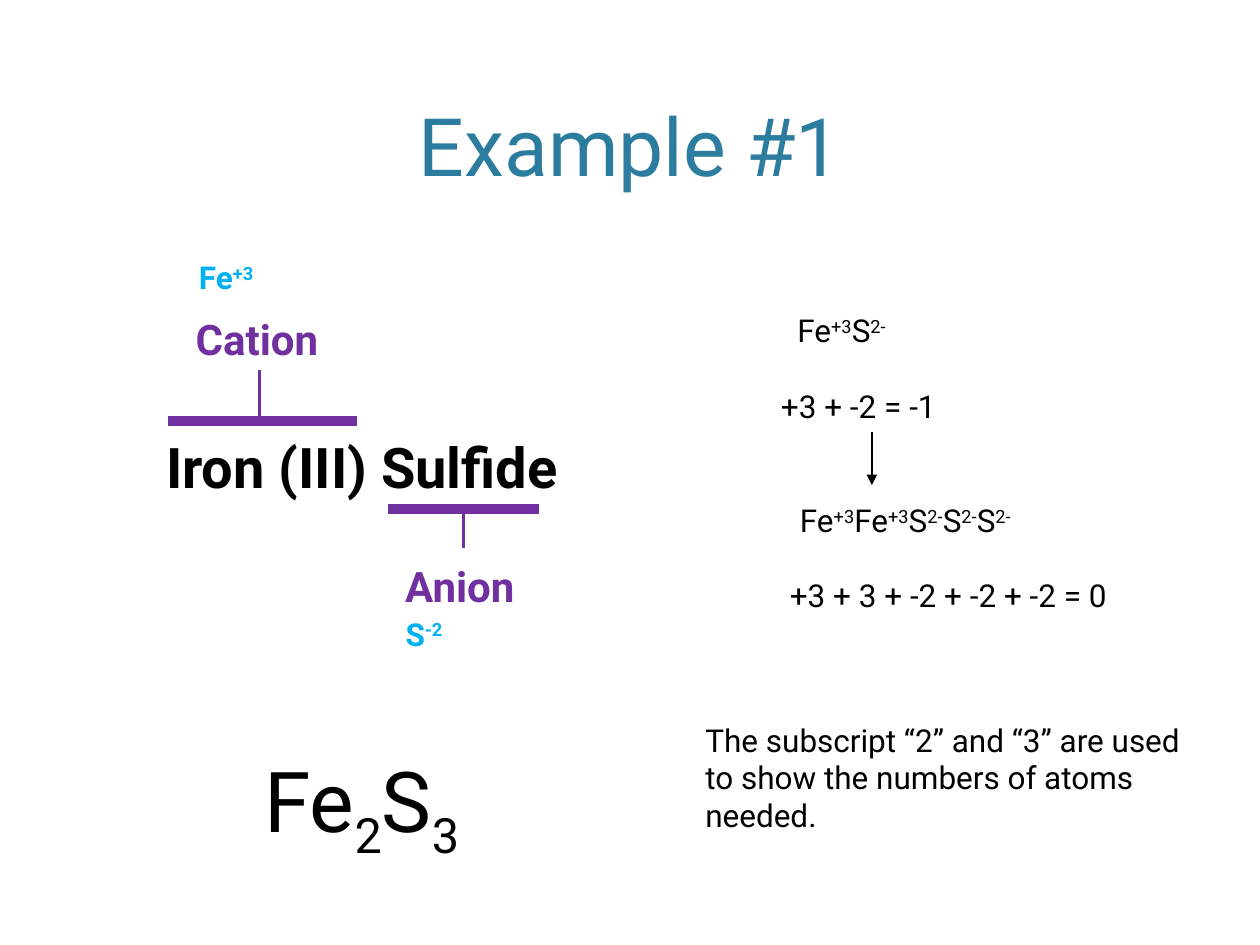
import pptx
import pptx.util
import pptx.dml.color
import pptx.enum.shapes
import pptx.enum.text
import pptx.oxml.ns
from lxml import etree

Inches = pptx.util.Inches
Align = pptx.enum.text.PP_ALIGN
Anchor = pptx.enum.text.MSO_ANCHOR
Fit = pptx.enum.text.MSO_AUTO_SIZE

FONT = "Roboto"
COLORS = {"title": "2C7C9F", "ink": "000000", "part": "7030A0", "ion": "00B0F0"}
SUPER, SUB = 30000, -25000

TITLE = ((0.6, 0.12, 8.8, 1.46), ["Example #1"], 46, "title")

# Box, pieces, size, colour, bold, wrap, centred; every second piece is raised.
LABELS = [
    ((1.22, 3.38, 3.68, 0.64), ["Iron (III) Sulfide"], 32, "ink", True, False, False),
    ((1.42, 2.44, 1.24, 0.5), ["Cation"], 24, "part", True, False, True),
    ((3.08, 4.4, 1.14, 0.5), ["Anion"], 24, "part", True, False, True),
    ((1.48, 2, 2.05, 0.4), ["Fe", "+3"], 18, "ion", True, True, False),
    ((3.12, 4.83, 2.05, 0.4), ["S", "-2"], 18, "ion", True, True, False),
]

# Box, pieces, wrap
STEPS = [
    ((6.23, 2.42, 1.69, 0.4), ["Fe", "+3", "S", "2-"], True),
    ((6.1, 3.02, 1.5, 0.4), ["+3 + -2 = -1"], False),
    ((6.25, 3.93, 2.12, 0.61), ["Fe", "+3"] * 2 + ["S", "2-"] * 3, False),
    ((6.17, 4.52, 2.85, 0.4), ["+3 + 3 + -2 + -2 + -2 = 0"], False),
    ((5.5, 5.67, 4.1, 1), ["The subscript “2” and “3” are used to show "
                           "the numbers of atoms needed."], True),
]

RESULT = ((2, 5.89, 1.89, 0.91), ["Fe", "2", "S", "3"], 48, "ink")

# Start, end, colour, width
LINES = [
    ((1.33, 3.34), (2.83, 3.34), "part", 6),
    ((2.06, 3.3), (2.06, 2.94), "part", 2),
    ((3.08, 4.04), (4.28, 4.04), "part", 6),
    ((3.68, 4.35), (3.68, 4.01), "part", 2),
]
ARROW = ((6.92, 3.43), (6.92, 3.85), "ink", 1)


def rgb(name):
    return pptx.dml.color.RGBColor.from_string(COLORS[name])


def add_text(slide, box, pieces, size, color, bold=False, wrap=False,
             center=False, shift=SUPER):
    """Add a text box in which every second piece is raised or lowered."""
    frame = slide.shapes.add_textbox(*map(Inches, box)).text_frame
    frame.word_wrap = wrap
    frame.auto_size = Fit.SHAPE_TO_FIT_TEXT
    para = frame.paragraphs[0]
    para.alignment = Align.CENTER if center else Align.LEFT
    for i, piece in enumerate(pieces):
        run = para.add_run()
        run.text = piece
        font = run.font
        font.name, font.size, font.bold = FONT, pptx.util.Pt(size), bold
        font.color.rgb = rgb(color)
        if i % 2:
            run._r.get_or_add_rPr().set("baseline", str(shift))
    return frame


def add_line(slide, start, end, color, width, arrow=False):
    line = slide.shapes.add_connector(
        pptx.enum.shapes.MSO_CONNECTOR.STRAIGHT, *map(Inches, start + end))
    line.line.color.rgb = rgb(color)
    line.line.width = pptx.util.Pt(width)
    qn = pptx.oxml.ns.qn
    props = line._element.spPr
    if arrow:
        etree.SubElement(props.find(qn("a:ln")), qn("a:tailEnd"), type="triangle")
    etree.SubElement(props, qn("a:effectLst"))


def main():
    deck = pptx.Presentation()
    deck.slide_width, deck.slide_height = Inches(10), Inches(7.5)
    slide = deck.slides.add_slide(deck.slide_layouts[6])

    title = add_text(slide, *TITLE, wrap=True, center=True)
    title.auto_size = Fit.NONE
    title.vertical_anchor = Anchor.BOTTOM
    for line in LINES:
        add_line(slide, *line)
    for label in LABELS:
        add_text(slide, *label)
    for box, pieces, wrap in STEPS:
        add_text(slide, box, pieces, 18, "ink", wrap=wrap)
    add_line(slide, *ARROW, arrow=True)
    add_text(slide, *RESULT, shift=SUB)

    deck.save("out.pptx")


if __name__ == "__main__":
    main()
